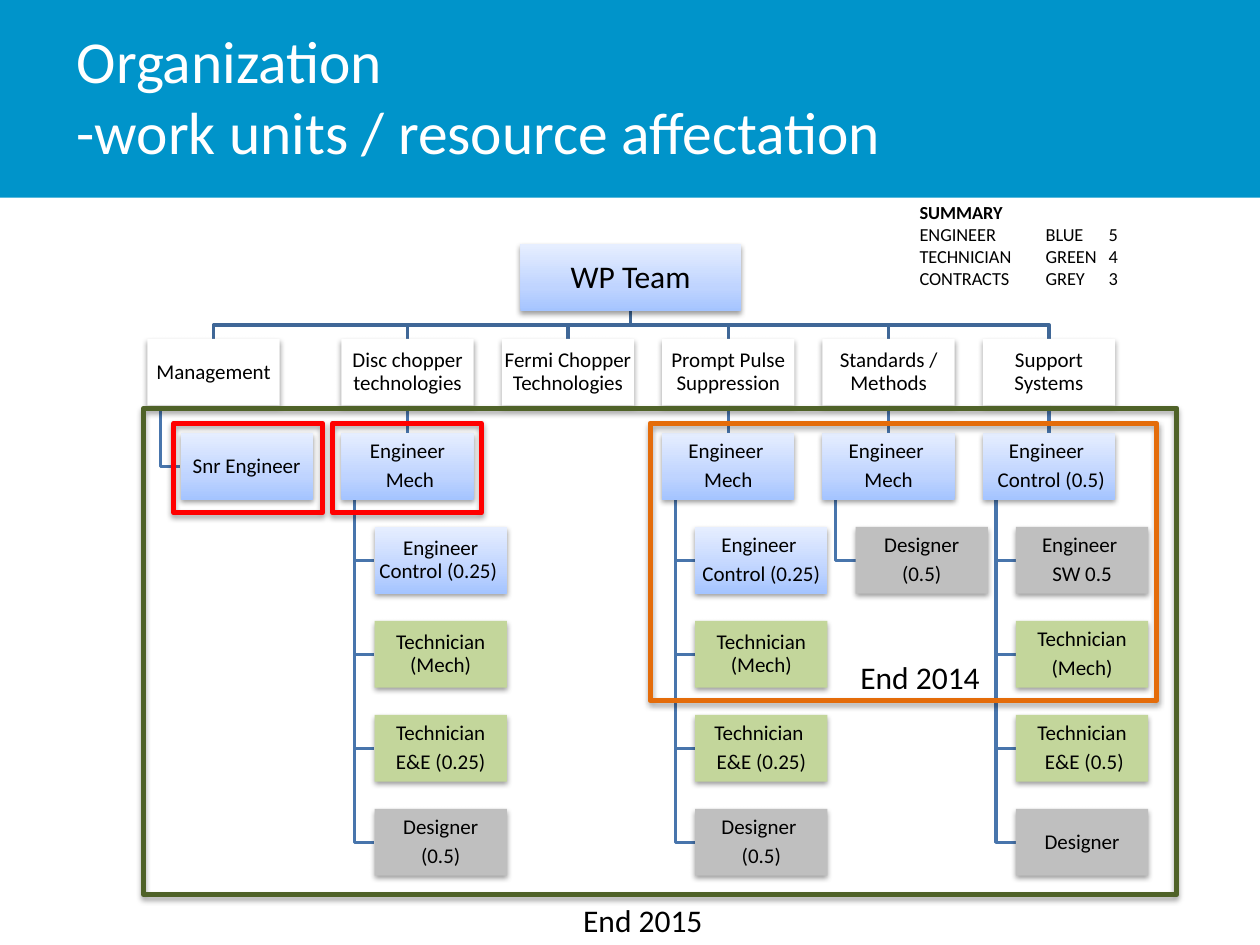
import copy

import pptx
import pptx.dml.color
import pptx.enum.shapes
import pptx.enum.text
import pptx.oxml
import pptx.oxml.ns
import pptx.util
from pptx.util import Inches

FONT = "Calibri"
RECTANGLE = pptx.enum.shapes.MSO_SHAPE.RECTANGLE
MIDDLE = pptx.enum.text.MSO_ANCHOR.MIDDLE
CENTER = pptx.enum.text.PP_ALIGN.CENTER
LEFT = pptx.enum.text.PP_ALIGN.LEFT

ROOT_LINE, TEAM_LINE = "3F6797", "4875AC"
BLUE = ((0, "A4C4FF"), (0.35, "BFD4FF"), (1, "E6EEFF"))
GREEN, GREY, WHITE = "C3D69B", "BFBFBF", "FFFFFF"

NODE_WIDTH, NODE_HEIGHT = 1.05, 0.53
TOP_ROW = 2.69
ROW_STEP = (6.42 - TOP_ROW) / 5
FIRST_TEAM = 2.71
TEAM_STEP = (7.8 - FIRST_TEAM) / 4
INDENT = NODE_WIDTH / 4
SPINE = NODE_WIDTH / 10

# Team name, lead (text or None), members (text, fill)
TEAMS = [
    ("Management", None, [("Snr Engineer", BLUE)]),
    ("Disc chopper technologies", "Engineer\n Mech", [
        ("Engineer Control (0.25) ", BLUE), ("Technician (Mech)", GREEN),
        ("Technician\nE&E (0.25)", GREEN), ("Designer\n(0.5)", GREY)]),
    ("Fermi Chopper Technologies", None, []),
    ("Prompt Pulse Suppression", "Engineer \nMech", [
        ("Engineer \nControl (0.25)", BLUE), ("Technician (Mech)", GREEN),
        ("Technician \nE&E (0.25)", GREEN), ("Designer \n(0.5)", GREY)]),
    ("Standards / Methods", "Engineer \nMech", [("Designer\n(0.5)", GREY)]),
    ("Support Systems", "Engineer \n Control (0.5)", [
        ("Engineer \nSW 0.5", GREY), ("Technician\n(Mech)", GREEN),
        ("Technician\n E&E (0.5)", GREEN), ("Designer", GREY)]),
]
TEAM_LEFTS = [1.17] + [FIRST_TEAM + TEAM_STEP * i for i in range(5)]


def rgb(value):
    return pptx.dml.color.RGBColor.from_string(value)


def to_inches(box):
    return [Inches(length) for length in box]


def format_runs(para, size, color="000000", bold=False):
    for span in para.runs:
        span.font.name = FONT
        span.font.size = pptx.util.Pt(size)
        span.font.color.rgb = rgb(color)
        span.font.bold = bold


def paint(shape, fill):
    """Fill with one hex colour, or with gradient stops running upwards."""
    if isinstance(fill, str):
        shape.fill.solid()
        shape.fill.fore_color.rgb = rgb(fill)
        return
    shape.fill.gradient()
    shape.fill.gradient_angle = 90
    stops = shape.element.spPr.find(".//" + pptx.oxml.ns.qn("a:gsLst"))
    stops.insert(1, copy.deepcopy(stops[0]))
    for stop, (position, color) in zip(shape.fill.gradient_stops, fill):
        stop.position = position
        stop.color.rgb = rgb(color)


def cast_shadow(shape, distance, opacity):
    """Add a soft black shadow below; distance in EMU, opacity in percent."""
    shape.shadow.inherit = False
    effects = shape.element.spPr.find(pptx.oxml.ns.qn("a:effectLst"))
    effects.append(pptx.oxml.parse_xml(
        f'<a:outerShdw {pptx.oxml.ns.nsdecls("a")} blurRad="40000" dist="{distance}" '
        f'dir="5400000" rotWithShape="0"><a:srgbClr val="000000">'
        f'<a:alpha val="{opacity * 1000}"/></a:srgbClr></a:outerShdw>'))


def style_line(shape, color, width):
    shape.line.color.rgb = rgb(color)
    shape.line.width = pptx.util.Pt(width)


def add_node(shapes, box, text, fill, size=12):
    node = shapes.add_shape(RECTANGLE, *to_inches(box))
    paint(node, fill)
    node.line.fill.background()
    cast_shadow(node, 20000, 38)
    frame = node.text_frame
    frame.margin_left = frame.margin_right = Inches(0.01)
    frame.margin_top = frame.margin_bottom = Inches(0.01)
    frame.word_wrap = True
    frame.vertical_anchor = MIDDLE
    frame.text = text
    for para in frame.paragraphs:
        para.alignment = CENTER
        para.line_spacing = 0.9
        para.space_after = pptx.util.Pt(4)
        format_runs(para, size)
    return node


def add_route(shapes, points, color):
    """Draw an open line through points given in inches."""
    start, *others = [to_inches(point) for point in points]
    builder = shapes.build_freeform(*start)
    builder.add_line_segments(others, close=False)
    route = builder.convert_to_shape()
    route.fill.background()
    route.shadow.inherit = False
    style_line(route, color, 2)


def add_straight_link(shapes, upper, lower):
    link = shapes.add_connector(pptx.enum.shapes.MSO_CONNECTOR.STRAIGHT, 0, 0, 0, 0)
    link.begin_connect(upper, 2)
    link.end_connect(lower, 0)
    style_line(link, TEAM_LINE, 2)
    link.element.spPr.append(pptx.oxml.parse_xml(
        f'<a:effectLst {pptx.oxml.ns.nsdecls("a")}/>'))


def add_team(shapes, left, top, name, lead, members):
    def node_box(row, indent=0):
        return left + indent, top + row * ROW_STEP, NODE_WIDTH, NODE_HEIGHT

    parent_row = 1 if lead else 0
    spine = left + SPINE
    parent_bottom = top + parent_row * ROW_STEP + NODE_HEIGHT
    member_boxes = [node_box(parent_row + i, INDENT) for i in range(1, len(members) + 1)]
    for x, y, _, height in member_boxes:
        middle = y + height / 2
        add_route(shapes, [(spine, parent_bottom), (spine, middle), (x, middle)], TEAM_LINE)
    head = add_node(shapes, node_box(0), name, WHITE)
    if lead:
        add_straight_link(shapes, head, add_node(shapes, node_box(1), lead, BLUE))
    for box, (text, fill) in zip(member_boxes, members):
        add_node(shapes, box, text, fill)


def add_organization_chart(page, root_box):
    shapes = page.shapes.add_group_shape().shapes
    left, top, width, height = root_box
    center, bottom = left + width / 2, top + height
    bus = (bottom + TOP_ROW) / 2
    for team_left in TEAM_LEFTS:
        x = team_left + NODE_WIDTH / 2
        add_route(shapes, [(center, bottom), (center, bus), (x, bus), (x, TOP_ROW)], ROOT_LINE)
    add_node(shapes, root_box, "WP Team", BLUE, 18)
    for team_left, team in zip(TEAM_LEFTS, TEAMS):
        add_team(shapes, team_left, TOP_ROW, *team)


def add_text(shapes, box, text, size):
    label = shapes.add_textbox(*to_inches(box))
    frame = label.text_frame
    frame.word_wrap = True
    frame.auto_size = pptx.enum.text.MSO_AUTO_SIZE.SHAPE_TO_FIT_TEXT
    frame.text = text
    for para in frame.paragraphs:
        format_runs(para, size)
    return label


def add_frames(page, boxes, color, label_box=None, label=None):
    """Group outlined frames with an optional label."""
    shapes = page.shapes.add_group_shape().shapes
    for box in boxes:
        frame = shapes.add_shape(RECTANGLE, *to_inches(box))
        frame.fill.background()
        style_line(frame, color, 3)
        cast_shadow(frame, 23000, 35)
    if label:
        add_text(shapes, label_box, label, 18)


def add_header(page, band_box, title_box):
    title = page.shapes.title
    band = page.shapes.add_shape(RECTANGLE, *to_inches(band_box))
    title.element.addprevious(band.element)
    paint(band, "0094CA")
    band.line.fill.background()
    band.shadow.inherit = False
    title.left, title.top, title.width, title.height = to_inches(title_box)
    title.text_frame.vertical_anchor = MIDDLE
    para = title.text_frame.paragraphs[0]
    para.text = "Organization\n-work units / resource affectation"
    para.alignment = LEFT
    format_runs(para, 34, WHITE)


def add_summary(page, box):
    summary = add_text(page.shapes, box, "SUMMARY\nENGINEER\tBLUE\t5\n"
                       "TECHNICIAN\tGREEN\t4\nCONTRACTS\tGREY\t3", 10.5)
    format_runs(summary.text_frame.paragraphs[0], 10.5, bold=True)


def main():
    deck = pptx.Presentation()
    deck.slide_width, deck.slide_height = Inches(10), Inches(7.5)
    page = deck.slides.add_slide(deck.slide_layouts[5])
    add_header(page, (0, 0, 10, 1.57), (0.51, 0.13, 7.81, 1.25))
    add_organization_chart(page, (4.13, 1.94, 1.75, 0.53))
    add_summary(page, (7.2, 1.55, 2.79, 0.8))
    add_frames(page, [(x, 3.36, 1.18, 0.71) for x in (2.64, 1.38)], "FF0000")
    add_frames(page, [(5.16, 3.36, 4.02, 2.2)], "E46C0A", (6.73, 5.17, 1.18, 0.4), "End 2014")
    add_frames(page, [(1.14, 3.24, 8.2, 3.86)], "4F6228", (4.53, 7.1, 1.57, 0.4), "End 2015")
    deck.save("out.pptx")


if __name__ == "__main__":
    main()
